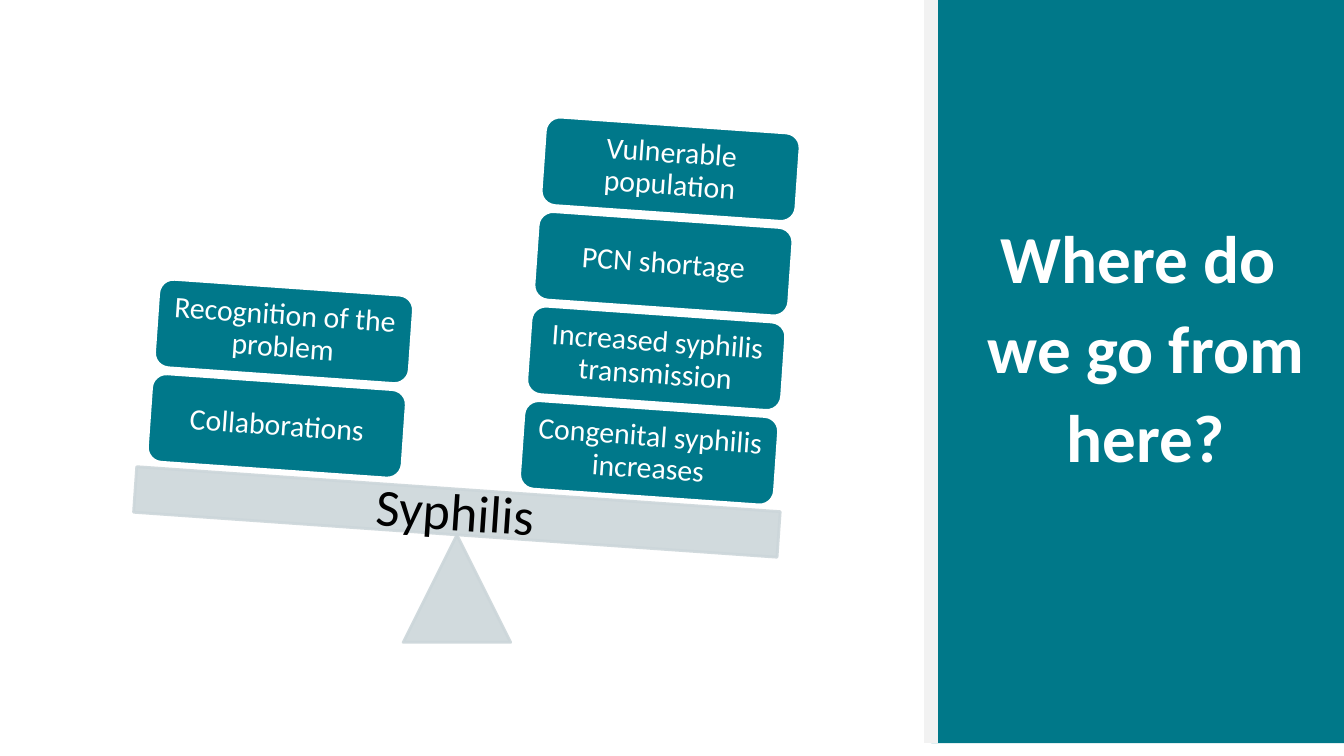
"""Build the slide that weighs syphilis problems against responses on a tilted scale."""
from dataclasses import dataclass

from lxml import etree
from pptx import Presentation
from pptx import util as u
from pptx.dml.color import RGBColor
from pptx.enum import shapes, text
from pptx.oxml.ns import qn


@dataclass(frozen=True)
class Theme:
    font: str = "Calibri"
    panel: str = "007889"
    block: str = "00788A"
    scale: str = "CCD6DA"
    divider: str = "F2F2F2"
    light: str = "FFFFFF"
    dark: str = "000000"
    title_size: int = 36
    beam_size: int = 28
    block_size: int = 16
    outline: float = 1.5
    opacity: int = 90


@dataclass(frozen=True)
class Box:
    left: float
    top: float
    width: float
    height: float
    rotation: float = 0

    def lengths(self) -> list:
        return [u.Inches(v) for v in (self.left, self.top, self.width, self.height)]


@dataclass(frozen=True)
class Stack:
    left: float
    top: float
    labels: tuple[str, ...]


THEME = Theme()
KIND = shapes.MSO_SHAPE
TILT = 4
BLOCK_WIDTH, BLOCK_HEIGHT = 1.9, 0.66
RISE_X, RISE_Y = 0.16, -2.11
STACKS = (
    Stack(3.88, 3.04, ("Congenital syphilis increases", "Increased syphilis transmission",
                       "PCN shortage", "Vulnerable population")),
    Stack(1.11, 2.84, ("Collaborations", "Recognition of the problem")),
)


def set_all(target, values: dict) -> None:
    for name, value in values.items():
        setattr(target, name, value)


def set_opacity(sp, percent: int) -> None:
    for color in sp._element.spPr.iter(qn("a:srgbClr")):
        etree.SubElement(color, qn("a:alpha")).set("val", str(percent * 1000))


def add_solid(s, kind, box: Box, fill: str, line: str | None = None):
    sp = s.shapes.add_shape(kind, *box.lengths())
    sp.rotation = box.rotation
    sp.shadow.inherit = False
    sp.fill.solid()
    sp.fill.fore_color.rgb = RGBColor.from_string(fill)
    if line:
        sp.line.color.rgb = RGBColor.from_string(line)
        sp.line.width = u.Pt(THEME.outline)
    else:
        sp.line.fill.background()
    return sp


def write(sp, lines: list[str], size: int, color: str, frame: dict,
          paragraph: dict, bold: bool = False, gap: float = 0) -> None:
    tf = sp.text_frame
    set_all(tf, frame)
    for i, line in enumerate(lines):
        p = tf.paragraphs[0] if i == 0 else tf.add_paragraph()
        set_all(p, paragraph)
        if i:
            p.space_before = u.Pt(gap)
        r = p.add_run()
        r.text = line
        set_all(r.font, {"name": THEME.font, "size": u.Pt(size), "bold": bold})
        r.font.color.rgb = RGBColor.from_string(color)


def add_text_box(s, box: Box):
    sp = s.shapes.add_textbox(*box.lengths())
    sp.rotation = box.rotation
    return sp


def draw_panel(s) -> None:
    add_solid(s, KIND.RECTANGLE, Box(6.93, 0, 3.07, 5.53), THEME.panel)
    divider = s.shapes.add_connector(shapes.MSO_CONNECTOR.STRAIGHT, u.Inches(6.93),
                                     u.Inches(0), u.Inches(6.93), u.Inches(5.53))
    divider.line.color.rgb = RGBColor.from_string(THEME.divider)
    divider.line.width = u.Pt(7.5)
    etree.SubElement(divider._element.spPr, qn("a:effectLst"))
    write(add_text_box(s, Box(7.1, 1.72, 2.74, 1.9)),
          ["Where do", " we go from", " here?"], THEME.title_size, THEME.light,
          {"word_wrap": True, "vertical_anchor": text.MSO_ANCHOR.MIDDLE},
          {"alignment": text.PP_ALIGN.CENTER, "line_spacing": u.Pt(30)},
          bold=True, gap=18)


def draw_scale(s) -> None:
    for kind, box in ((KIND.ISOSCELES_TRIANGLE, Box(3, 3.98, 0.8, 0.8)),
                      (KIND.RECTANGLE, Box(1, 3.64, 4.8, 0.34, TILT))):
        set_opacity(add_solid(s, kind, box, THEME.scale, THEME.scale), THEME.opacity)


def draw_stack(s, stack: Stack) -> None:
    margins = dict.fromkeys(
        ("margin_left", "margin_right", "margin_top", "margin_bottom"), u.Inches(0.06))
    frame = {"word_wrap": True, "vertical_anchor": text.MSO_ANCHOR.MIDDLE, **margins}
    for i, label in enumerate(stack.labels):
        box = Box(stack.left + i * RISE_X / 3, stack.top + i * RISE_Y / 3,
                  BLOCK_WIDTH, BLOCK_HEIGHT, TILT)
        sp = add_solid(s, KIND.ROUNDED_RECTANGLE, box, THEME.block, THEME.light)
        write(sp, [label], THEME.block_size, THEME.light, frame,
              {"alignment": text.PP_ALIGN.CENTER, "line_spacing": 0.9})


def main() -> None:
    prs = Presentation()
    prs.slide_width, prs.slide_height = u.Inches(10), u.Inches(10 * 9 / 16)
    s = prs.slides.add_slide(prs.slide_layouts[6])
    draw_panel(s)
    draw_scale(s)
    for stack in STACKS:
        draw_stack(s, stack)
    write(add_text_box(s, Box(2.7, 3.51, 1.39, 0.57, 3.9)), ["Syphilis"],
          THEME.beam_size, THEME.dark, {"word_wrap": False},
          {"alignment": text.PP_ALIGN.LEFT})
    prs.save("out.pptx")


if __name__ == "__main__":
    main()
